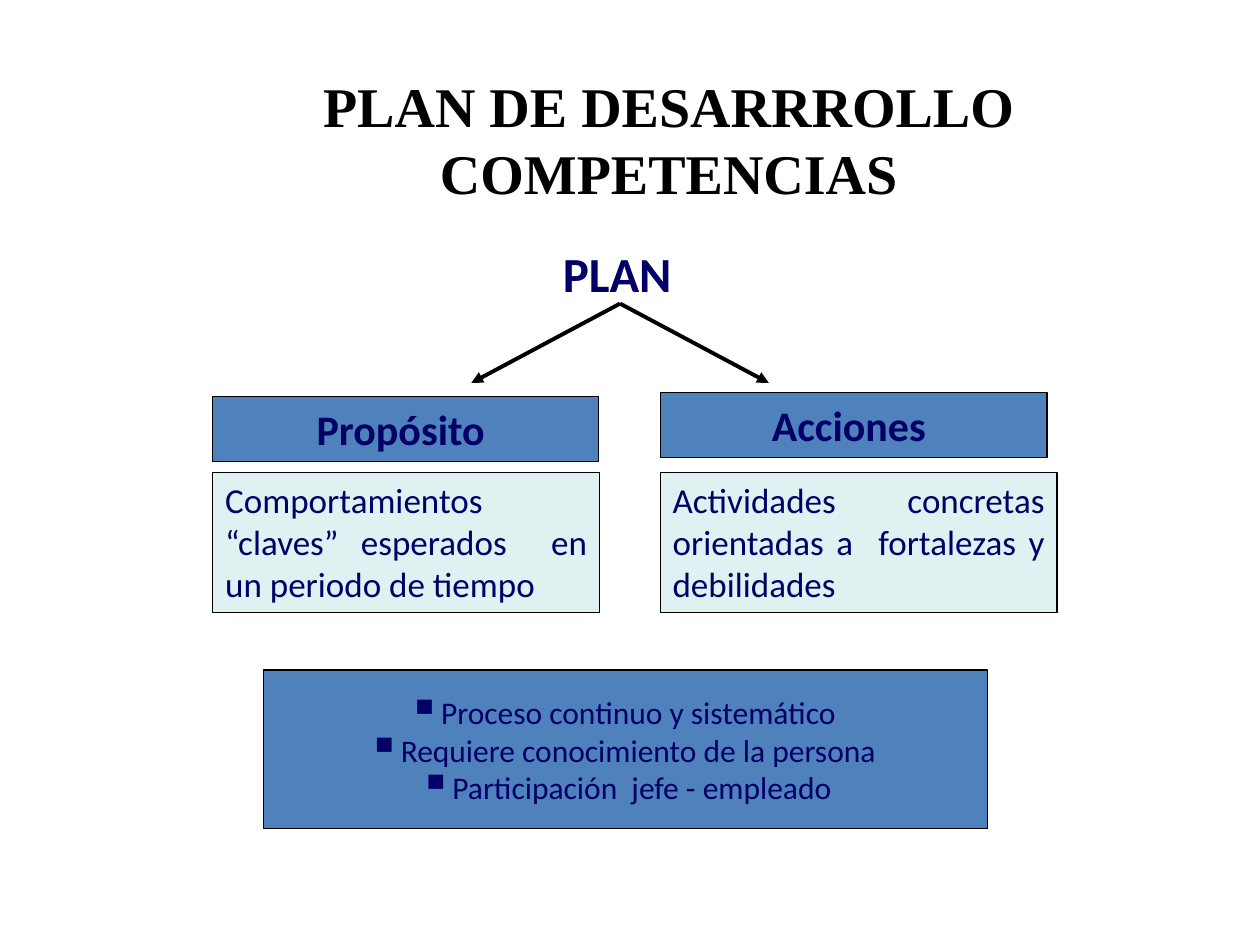
from lxml import etree
from pptx import Presentation
from pptx.dml.color import RGBColor
from pptx.enum.shapes import MSO_CONNECTOR, MSO_SHAPE
from pptx.enum.text import MSO_ANCHOR, PP_ALIGN
from pptx.oxml.ns import qn
from pptx.util import Cm, Pt

RECTANGLE, STRAIGHT = MSO_SHAPE.RECTANGLE, MSO_CONNECTOR.STRAIGHT
TOP, MIDDLE = MSO_ANCHOR.TOP, MSO_ANCHOR.MIDDLE
LEFT, CENTER, JUSTIFY = PP_ALIGN.LEFT, PP_ALIGN.CENTER, PP_ALIGN.JUSTIFY

# Content
TITLE = "PLAN DE DESARRROLLO\vCOMPETENCIAS"
ROOT = "PLAN"
BRANCHES = [
    {"heading": "Propósito ", "heading_box": (4.29, 8.0, 7.77, 1.3),
     "detail": "Comportamientos “claves” esperados  en un periodo de tiempo",
     "detail_box": (4.29, 9.53, 7.8, 2.82)},
    {"heading": "Acciones ", "heading_box": (13.31, 7.92, 7.8, 1.3),
     "detail": "Actividades concretas orientadas a  fortalezas y debilidades",
     "detail_box": (13.31, 9.53, 8.0, 2.82)},
]
FEATURES = [
    "Proceso continuo y sistemático ",
    "Requiere conocimiento de la persona ",
    "Participación  jefe - empleado",
]

# Placement in centimetres: left, top, width, height
TITLE_BOX = (2.69, 1.32, 21.59, 3.71)
ROOT_BOX = (11.1, 4.78, 3.2, 1.45)
FEATURES_BOX = (5.31, 13.51, 14.6, 3.2)
FORK_X, FORK_Y = 12.5, 6.12
ARROW_REACH, ARROW_DROP = 3.0, 1.6

THEME = {
    "title": {"font": "Times New Roman", "size": 32, "color": "000000", "bold": True},
    "root": {"font": "Calibri", "size": 28, "color": "000066", "bold": True},
    "heading": {"font": "Calibri", "size": 24, "color": "000066", "bold": True},
    "detail": {"font": "Calibri", "size": 20, "color": "000066", "bold": False},
    "feature": {"font": "Calibri", "size": 18, "color": "000066", "bold": False},
    "strong_fill": "4F81BD", "soft_fill": "E0F1F2", "line": "000000",
    "border": 0.75, "arrow": 2.25,
}


def write(frame, lines, style_name, align, anchor=TOP, wrap=True, bullet=None):
    style = THEME[style_name]
    frame.word_wrap = wrap
    frame.vertical_anchor = anchor
    frame.text = "\n".join(lines)
    for paragraph in frame.paragraphs:
        paragraph.alignment = align
        if bullet:
            properties = paragraph._p.get_or_add_pPr()
            etree.SubElement(properties, qn("a:buSzPct"), val="140000")
            etree.SubElement(properties, qn("a:buChar"), char=bullet)
        for run in paragraph.runs:
            run.font.name = style["font"]
            run.font.size = Pt(style["size"])
            run.font.bold = style["bold"]
            run.font.color.rgb = RGBColor.from_string(style["color"])


def add_label(slide, box, text, style_name, align, wrap=True):
    label = slide.shapes.add_textbox(*map(Cm, box))
    write(label.text_frame, [text], style_name, align, wrap=wrap)


def add_panel(slide, box, fill, lines, style_name, align, **layout):
    panel = slide.shapes.add_shape(RECTANGLE, *map(Cm, box))
    panel.shadow.inherit = False
    panel.fill.solid()
    panel.fill.fore_color.rgb = RGBColor.from_string(THEME[fill])
    panel.line.color.rgb = RGBColor.from_string(THEME["line"])
    panel.line.width = Pt(THEME["border"])
    write(panel.text_frame, lines, style_name, align, **layout)


def add_arrow(slide, start, end):
    arrow = slide.shapes.add_connector(STRAIGHT, *map(Cm, start + end))
    arrow.line.color.rgb = RGBColor.from_string(THEME["line"])
    arrow.line.width = Pt(THEME["arrow"])
    etree.SubElement(arrow.line._get_or_add_ln(), qn("a:tailEnd"), type="triangle")
    etree.SubElement(arrow._element.spPr, qn("a:effectLst"))


def main():
    deck = Presentation()
    deck.slide_width, deck.slide_height = Cm(25.4), Cm(19.05)
    slide = deck.slides.add_slide(deck.slide_layouts[6])

    # Title and root of the diagram
    add_label(slide, TITLE_BOX, TITLE, "title", CENTER)
    add_label(slide, ROOT_BOX, ROOT, "root", LEFT, wrap=False)

    # Two branches, each with an arrow, a heading and a detail
    for side, branch in zip((-1, 1), BRANCHES):
        add_arrow(slide, (FORK_X, FORK_Y),
                  (FORK_X + side * ARROW_REACH, FORK_Y + ARROW_DROP))
        add_panel(slide, branch["heading_box"], "strong_fill",
                  [branch["heading"]], "heading", CENTER)
        add_panel(slide, branch["detail_box"], "soft_fill",
                  [branch["detail"]], "detail", JUSTIFY)

    # Features of the plan
    add_panel(slide, FEATURES_BOX, "strong_fill", FEATURES, "feature", CENTER,
              anchor=MIDDLE, wrap=False, bullet="▪")

    deck.save("out.pptx")


if __name__ == "__main__":
    main()
